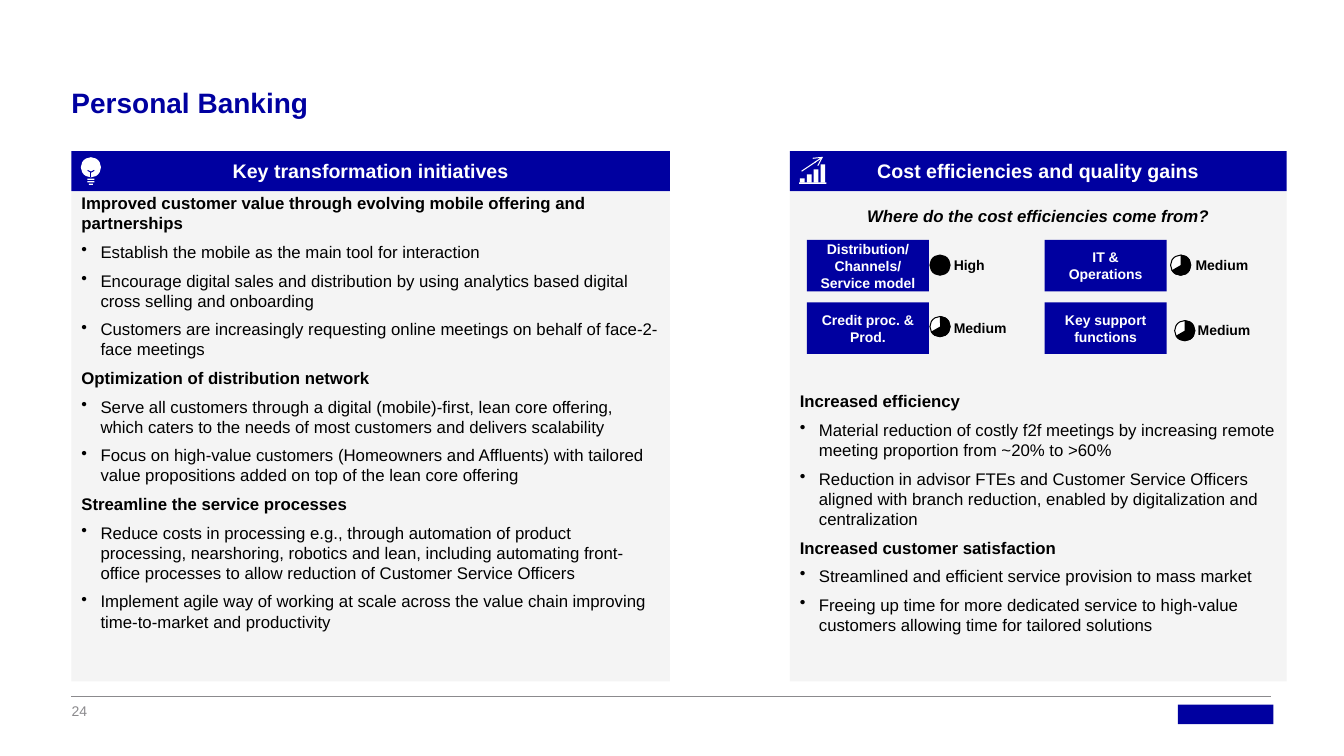
import pptx
import pptx.util
import pptx.dml.color
import pptx.enum.shapes
import pptx.enum.text
import lxml.etree

Pt = pptx.util.Pt
KIND = pptx.enum.shapes.MSO_SHAPE
ALIGN = pptx.enum.text.PP_ALIGN
ANCHOR = pptx.enum.text.MSO_ANCHOR
NS = "http://schemas.openxmlformats.org/drawingml/2006/main"
HUES = {"navy": "0000A0", "pale": "F4F4F4", "gray": "8B8A8D",
        "white": "FFFFFF", "black": "000000"}


class Deck:
    def __init__(self, width, height, font):
        self.file = pptx.Presentation()
        self.file.slide_width, self.file.slide_height = Pt(width), Pt(height)
        self.slide = self.file.slides.add_slide(self.file.slide_layouts[6])
        self.font = font

    def hue(self, name):
        return pptx.dml.color.RGBColor.from_string(HUES[name])

    def shape(self, box, fill, kind=KIND.RECTANGLE, line=None):
        form = self.slide.shapes.add_shape(kind, *map(Pt, box))
        form.shadow.inherit = False
        form.fill.solid()
        form.fill.fore_color.rgb = self.hue(fill)
        if line:
            form.line.color.rgb = self.hue(line)
            form.line.width = Pt(0.75)
        else:
            form.line.fill.background()
        return form

    def line(self, start, end, color, width, head=False):
        link = self.slide.shapes.add_connector(
            pptx.enum.shapes.MSO_CONNECTOR.STRAIGHT, *map(Pt, start + end))
        link.line.color.rgb = self.hue(color)
        link.line.width = Pt(width)
        if head:
            edge = link._element.spPr.find(f"{{{NS}}}ln")
            lxml.etree.SubElement(edge, f"{{{NS}}}tailEnd").set("type", "arrow")
        lxml.etree.SubElement(link._element.spPr, f"{{{NS}}}effectLst")

    def frame(self, form, pad, anchor):
        frame = form.text_frame
        frame.word_wrap = True
        frame.vertical_anchor = anchor
        (frame.margin_left, frame.margin_top,
         frame.margin_right, frame.margin_bottom) = map(Pt, pad)
        return frame

    def style(self, part, size, color, bold, italic=False, align=ALIGN.LEFT):
        part.alignment = align
        part.line_spacing = Pt(size * 1.2)
        for run in part.runs:
            run.font.name, run.font.size = self.font, Pt(size)
            run.font.bold, run.font.italic = bold, italic
            run.font.color.rgb = self.hue(color)

    def label(self, form, text, size, color, bold=True, italic=False,
              align=ALIGN.LEFT, anchor=ANCHOR.TOP, pad=(7.2, 3.6, 7.2, 3.6)):
        frame = self.frame(form, pad, anchor)
        frame.text = text
        for part in frame.paragraphs:
            self.style(part, size, color, bold, italic, align)

    def text(self, box, text, size, color, **look):
        form = self.slide.shapes.add_textbox(*map(Pt, box))
        self.label(form, text, size, color, **look)

    def points(self, form, groups, top):
        frame = self.frame(form, (7.2, top, 7.2, 0), ANCHOR.TOP)
        rows = [(text, spot > 0) for group in groups for spot, text in enumerate(group)]
        frame.text = "\n".join(text for text, item in rows)
        for spot, (part, (text, item)) in enumerate(zip(frame.paragraphs, rows)):
            self.style(part, 12, "black", not item)
            if spot:
                part.space_before = Pt(6)
            if item:
                props = part._p.get_or_add_pPr()
                props.set("marL", str(Pt(13.7)))
                props.set("indent", str(-Pt(13.7)))
                lxml.etree.SubElement(props, f"{{{NS}}}buChar").set("char", "•")

    def panel(self, left, width, title):
        body = self.shape((left, 136.8, width, 350), "pale")
        head = self.shape((left, 108, width, 28.5), "navy")
        self.label(head, title, 14, "white", align=ALIGN.CENTER, anchor=ANCHOR.MIDDLE)
        return body

    def rating(self, box, ball, note, name, level):
        tile = self.shape(box + (87.1, 36.7), "navy")
        self.label(tile, name, 10, "white", align=ALIGN.CENTER,
                   anchor=ANCHOR.MIDDLE, pad=(7.2, 0, 7.2, 0))
        self.text(note + (91.4, 19.4), level, 10, "black")
        full = level == "High"
        self.shape(ball + (14.4, 14.4), "black" if full else "white", KIND.OVAL, "black")
        if not full:
            arc = self.shape(ball + (14.4, 14.4), "black", KIND.ARC, "black")
            arc.adjustments[0], arc.adjustments[1] = 162, 90


LEFT = [
    ["Improved customer value through evolving mobile offering and partnerships",
     "Establish the mobile as the main tool for interaction",
     "Encourage digital sales and distribution by using analytics based digital cross selling and onboarding",
     "Customers are increasingly requesting online meetings on behalf of face-2-face meetings"],
    ["Optimization of distribution network",
     "Serve all customers through a digital (mobile)-first, lean core offering, which caters to the needs of most customers and delivers scalability",
     "Focus on high-value customers (Homeowners and Affluents) with tailored value propositions added on top of the lean core offering"],
    ["Streamline the service processes",
     "Reduce costs in processing e.g., through automation of product processing, nearshoring, robotics and lean, including automating front-office processes to allow reduction of Customer Service Officers",
     "Implement agile way of working at scale across the value chain improving time-to-market and productivity"],
]
RIGHT = [
    ["Increased efficiency",
     "Material reduction of costly f2f meetings by increasing remote meeting proportion from ~20% to >60%",
     "Reduction in advisor FTEs and Customer Service Officers aligned with branch reduction, enabled by digitalization and centralization"],
    ["Increased customer satisfaction",
     "Streamlined and efficient service provision to mass market",
     "Freeing up time for more dedicated service to high-value customers allowing time for tailored solutions"],
]
# Tile, ball and note corners, then name and level
RATES = [
    ((576.7, 171.4), (664.6, 182.2), (674.6, 180), "Distribution/\vChannels/\vService model", "High"),
    ((576.7, 216), (664.6, 226.1), (674.6, 224.6), "Credit proc. & Prod.", "Medium"),
    ((746.6, 171.4), (836.6, 182.2), (847.4, 180), "IT & Operations", "Medium"),
    ((746.6, 216), (839.5, 229), (848.9, 226.1), "Key support functions", "Medium"),
]


def main():
    deck = Deck(960.5, 540, "Arial")

    # Title and footer
    deck.text((51.1, 28.1, 566.6, 56.9), "Personal Banking", 20, "navy",
              anchor=ANCHOR.BOTTOM, pad=(0, 0, 0, 0))
    deck.line((51.1, 497.5), (908.6, 497.5), "gray", 0.75)
    deck.text((51.1, 501.8, 25.2, 11.5), "24", 10, "gray", bold=False,
              anchor=ANCHOR.MIDDLE, pad=(0, 0, 0, 0))
    deck.shape((841.7, 503.3, 68.4, 14), "navy")

    # Left panel
    body = deck.panel(51.1, 427.7, "Key transformation initiatives")
    deck.points(body, LEFT, 1)

    # Right panel
    deck.panel(564.5, 355, "Cost efficiencies and quality gains")
    deck.text((564.5, 143.3, 355, 21.6), "Where do the cost efficiencies come from?",
              12, "black", italic=True, align=ALIGN.CENTER)
    for rate in RATES:
        deck.rating(*rate)
    area = deck.slide.shapes.add_textbox(*map(Pt, (564.5, 275.8, 355, 189.4)))
    deck.points(area, RIGHT, 3.6)

    # Bulb icon
    deck.shape((57.8, 112.3, 14.4, 14.4), "white", KIND.OVAL)
    for end in ((62.6, 121.7), (67.4, 121.7), (65, 126.7)):
        deck.line((65, 123), end, "navy", 0.75)
    for row, width in enumerate((5, 5, 3)):
        deck.shape((65 - width / 2, 127.5 + 1.8 * row, width, 1), "white")

    # Growth icon
    deck.shape((571, 130.3, 19.6, 1), "white")
    for spot, height in enumerate((3, 6, 9.5, 13)):
        deck.shape((571.7 + 4.9 * spot, 130.5 - height, 3.4, height), "white")
    deck.line((572.9, 122.3), (588.2, 112), "white", 0.75, head=True)

    deck.file.save("out.pptx")


if __name__ == "__main__":
    main()
